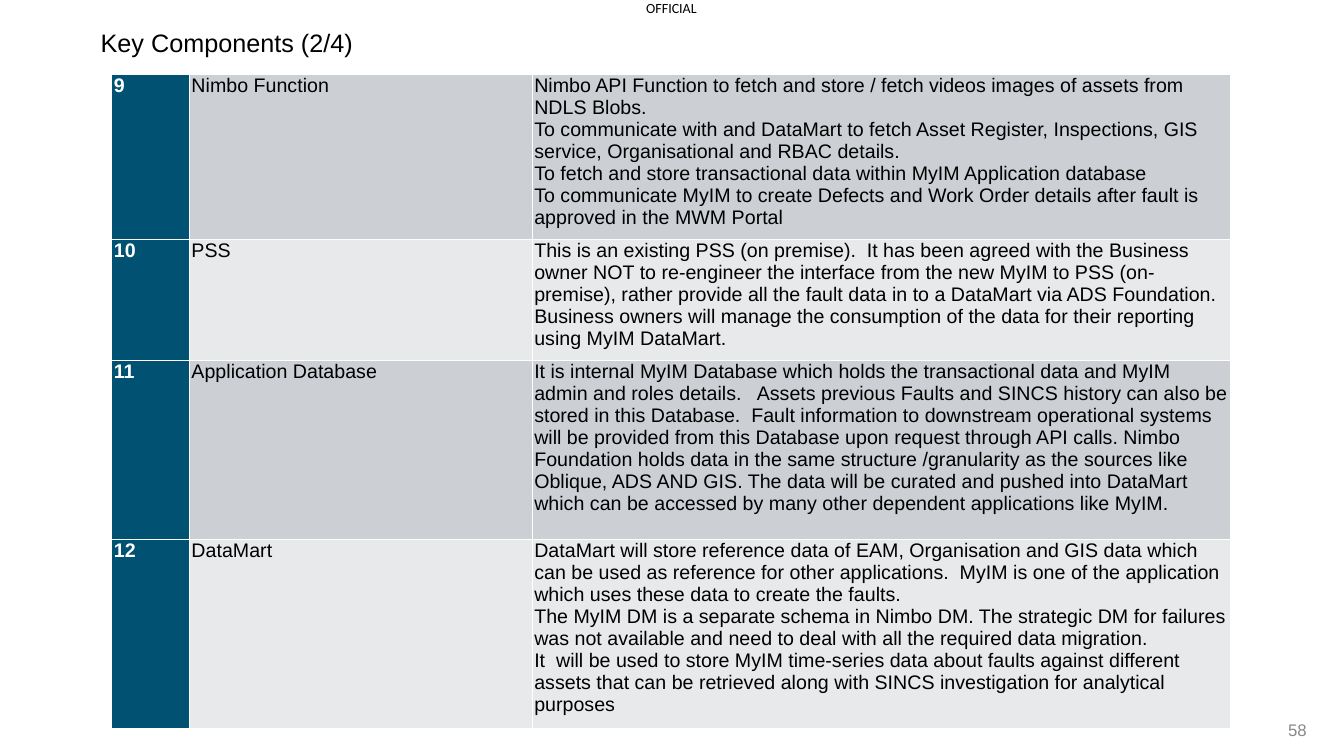
from lxml.etree import SubElement
from pptx import Presentation
from pptx.dml.color import RGBColor
from pptx.enum.text import MSO_ANCHOR, PP_ALIGN
from pptx.oxml.ns import qn
from pptx.util import Inches, Pt

BLACK = RGBColor(0x00, 0x00, 0x00)
WHITE = RGBColor(0xFF, 0xFF, 0xFF)
GREY = RGBColor(0x89, 0x89, 0x89)
TEAL = RGBColor(0x00, 0x51, 0x72)
BANDS = [RGBColor(0xCC, 0xD0, 0xD5), RGBColor(0xE7, 0xE9, 0xEB)]

COLUMN_WIDTHS = [0.77, 3.4, 6.93]
ROW_HEIGHTS = [1.63, 1.2, 1.78, 1.87]
# In cell text \v is a line break and \n starts a new paragraph.
COMPONENTS = [
    ("9", "Nimbo Function",
     "Nimbo API Function to fetch and store / fetch videos images of assets from "
     "NDLS Blobs.\v"
     "To communicate with and DataMart to fetch Asset Register, Inspections, GIS "
     "service, Organisational and RBAC details.\v"
     "To fetch and store transactional data within MyIM Application database\v"
     "To communicate MyIM to create Defects and Work Order details after fault is "
     "approved in the MWM Portal"),
    ("10", "PSS",
     "This is an existing PSS (on premise).  It has been agreed with the Business "
     "owner NOT to re-engineer the interface from the new MyIM to PSS (on-premise), "
     "rather provide all the fault data in to a DataMart via ADS Foundation.  "
     "Business owners will manage the consumption of the data for their reporting "
     "using MyIM DataMart."),
    ("11", "Application Database",
     "It is internal MyIM Database which holds the transactional data and MyIM "
     "admin and roles details.   Assets previous Faults and SINCS history can also be "
     "stored in this Database.  Fault information to downstream operational systems "
     "will be provided from this Database upon request through API calls. Nimbo "
     "Foundation holds data in the same structure /granularity as the sources like "
     "Oblique, ADS AND GIS. The data will be curated and pushed into DataMart "
     "which can be accessed by many other dependent applications like MyIM."),
    ("12", "DataMart",
     "DataMart will store reference data of EAM, Organisation and GIS data which "
     "can be used as reference for other applications.  MyIM is one of the application "
     "which uses these data to create the faults.\n"
     "The MyIM DM is a separate schema in Nimbo DM. The strategic DM for failures "
     "was not available and need to deal with all the required data migration.\n"
     "It  will be used to store MyIM time-series data about faults against different "
     "assets that can be retrieved along with SINCS investigation for analytical "
     "purposes"),
]


def style_text(tf, size, color, font="Arial", bold=False):
    for p in tf.paragraphs:
        for r in p.runs:
            r.font.name = font
            r.font.size = Pt(size)
            r.font.bold = bold
            r.font.color.rgb = color


def add_label(slide, text, box, size, color, font="Arial"):
    sp = slide.shapes.add_textbox(*(Inches(v) for v in box))
    tf = sp.text_frame
    tf.word_wrap = True
    tf.text = text
    style_text(tf, size, color, font)
    return tf


def set_borders(cell, color, width):
    """Draw the four sides of a cell; the lines must precede its fill in the XML."""
    tc_pr = cell._tc.get_or_add_tcPr()
    for side in ("a:lnL", "a:lnR", "a:lnT", "a:lnB"):
        ln = SubElement(tc_pr, qn(side), w=str(Pt(width)))
        fill = SubElement(ln, qn("a:solidFill"))
        SubElement(fill, qn("a:srgbClr"), val=str(color))


def add_component_table(slide):
    frame = slide.shapes.add_table(
        len(COMPONENTS), len(COLUMN_WIDTHS), Inches(1.11), Inches(0.74),
        Inches(sum(COLUMN_WIDTHS)), Inches(sum(ROW_HEIGHTS)))
    table = frame.table
    table.first_row = False
    table.horz_banding = False
    for column, width in zip(table.columns, COLUMN_WIDTHS):
        column.width = Inches(width)
    for i, (row, height) in enumerate(zip(table.rows, ROW_HEIGHTS)):
        row.height = Inches(height)
        for j, cell in enumerate(row.cells):
            is_number = j == 0
            cell.margin_left = cell.margin_right = Inches(0.02)
            cell.margin_top = cell.margin_bottom = 0
            set_borders(cell, WHITE, 1)
            cell.fill.solid()
            cell.fill.fore_color.rgb = TEAL if is_number else BANDS[i % 2]
            cell.text_frame.text = COMPONENTS[i][j]
            style_text(cell.text_frame, 14, WHITE if is_number else BLACK, bold=is_number)


def main():
    prs = Presentation()
    prs.slide_width, prs.slide_height = Inches(13.33), Inches(7.5)
    slide = prs.slides.add_slide(prs.slide_layouts[6])

    marking = add_label(slide, "OFFICIAL", (6.41, 0, 0.53, 0.17), 10, BLACK, "Calibri")
    marking.word_wrap = False
    marking.margin_left = marking.margin_right = 0
    marking.margin_top = marking.margin_bottom = 0

    number = add_label(slide, "58", (12.13, 7.14, 0.93, 0.2), 12, GREY)
    number.vertical_anchor = MSO_ANCHOR.MIDDLE
    number.paragraphs[0].alignment = PP_ALIGN.RIGHT

    add_component_table(slide)
    add_label(slide, "Key Components (2/4)", (0.9, 0.22, 9.92, 0.4), 18, BLACK)
    prs.save("out.pptx")


if __name__ == "__main__":
    main()
